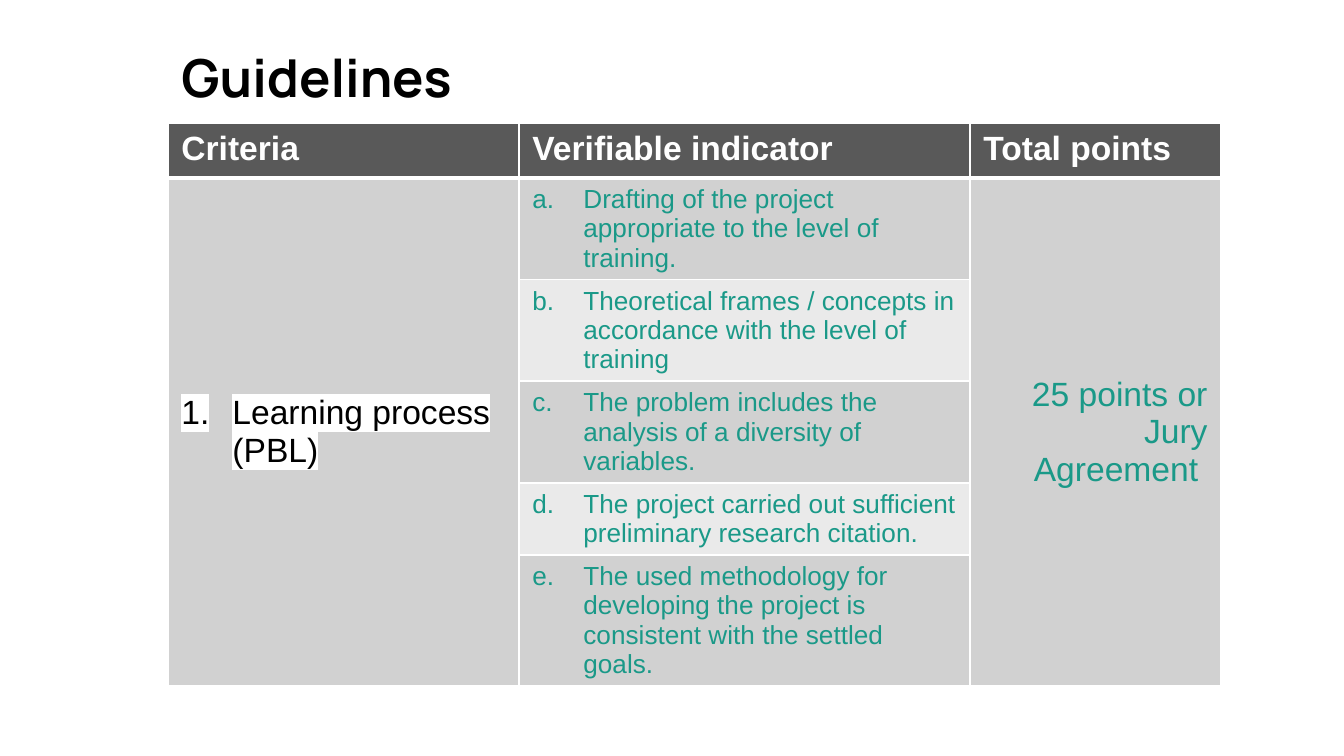
import pptx
import pptx.dml.color
import pptx.enum.text
import pptx.oxml
import pptx.oxml.ns
import pptx.util

TITLE = "Guidelines"
HEADERS = ["Criteria", "Verifiable indicator", "Total points"]
CRITERION = "Learning process (PBL)"
INDICATORS = [
    "Drafting of the project appropriate to the level of training.",
    "Theoretical frames / concepts in accordance with the level of training",
    "The problem includes the analysis of a diversity of variables.",
    "The project carried out sufficient preliminary research citation.",
    "The used methodology for developing the project is consistent with the settled goals.",
]
POINTS = "25 points or Jury Agreement "

THEME = {
    "title_font": "Manrope", "body_font": "Arial",
    "title_size": 28, "large_size": 18, "small_size": 14,
    "black": "000000", "white": "FFFFFF", "teal": "1A9988",
    "header_fill": "595959", "bands": ["D1D1D1", "EAEAEA"],
}
SLIDE_SIZE = (1344, 756)
TITLE_BOX = (168, 32, 857, 80)
TABLE_BOX = (168, 123, 1053, 593)
COLUMN_WIDTHS = [351, 451, 251]
MINIMUM_ROW_HEIGHT = 55  # rows grow to fit their text
INDENT = 51
EMU_PER_PX = 914400 / 134.4


def px(length):
    return pptx.util.Emu(round(length * EMU_PER_PX))


def rgb(name):
    return pptx.dml.color.RGBColor.from_string(name)


def write(text_frame, text, size, color, font="body_font", bold=False):
    text_frame.text = text
    paragraph = text_frame.paragraphs[0]
    paragraph.font.name = THEME[font]
    paragraph.font.size = pptx.util.Pt(THEME[size])
    paragraph.font.bold = bold
    paragraph.font.color.rgb = rgb(THEME[color])
    return paragraph


def xml(tag, content="", attributes=""):
    namespace = pptx.oxml.ns.nsdecls("a")
    return pptx.oxml.parse_xml(f"<a:{tag} {namespace} {attributes}>{content}</a:{tag}>")


def highlight(paragraph):
    color = f'<a:srgbClr val="{THEME["white"]}"/>'
    paragraph.runs[0].font._element.append(xml("highlight", color))


def number(paragraph, scheme, start=1):
    """Give the paragraph a hanging automatic number."""
    properties = paragraph._p.get_or_add_pPr()
    properties.set("marL", str(px(INDENT)))
    properties.set("indent", str(-px(INDENT)))
    properties.insert(0, xml("buAutoNum", attributes=f'type="{scheme}" startAt="{start}"'))


def style_cell(cell, fill, bottom_width=1):
    """Fill the cell and draw its white borders, widths in points."""
    cell.fill.solid()
    cell.fill.fore_color.rgb = rgb(fill)
    properties = cell._tc.get_or_add_tcPr()
    line_fill = f'<a:solidFill><a:srgbClr val="{THEME["white"]}"/></a:solidFill>'
    for position, side in enumerate(["lnL", "lnR", "lnT", "lnB"]):
        width = pptx.util.Pt(bottom_width if side == "lnB" else 1)
        properties.insert(position, xml(side, line_fill, f'w="{width}"'))


def add_title(slide):
    title = slide.shapes.title
    title.left, title.top, title.width, title.height = map(px, TITLE_BOX)
    frame = title.text_frame
    frame.auto_size = pptx.enum.text.MSO_AUTO_SIZE.NONE
    frame.vertical_anchor = pptx.enum.text.MSO_ANCHOR.TOP
    frame.margin_left = frame.margin_right = pptx.util.Inches(0.1)
    frame.margin_top = frame.margin_bottom = pptx.util.Inches(0.1)
    paragraph = write(frame, TITLE, "title_size", "black", "title_font", True)
    paragraph.alignment = pptx.enum.text.PP_ALIGN.LEFT
    highlight(paragraph)


def add_criteria_table(slide):
    row_count = len(INDICATORS) + 1
    frame = slide.shapes.add_table(row_count, len(HEADERS), *map(px, TABLE_BOX))
    table = frame.table
    table.horz_banding = False
    for column, width in zip(table.columns, COLUMN_WIDTHS):
        column.width = px(width)
    for row in table.rows:
        row.height = px(MINIMUM_ROW_HEIGHT)
    frame.height = px(TABLE_BOX[3])

    for column, text in enumerate(HEADERS):
        cell = table.cell(0, column)
        write(cell.text_frame, text, "large_size", "white", bold=True)
        style_cell(cell, THEME["header_fill"], bottom_width=3)

    for row, text in enumerate(INDICATORS, 1):
        cell = table.cell(row, 1)
        number(write(cell.text_frame, text, "small_size", "teal"), "alphaLcPeriod", row)
        style_cell(cell, THEME["bands"][(row - 1) % 2])
        for column in (0, 2):
            style_cell(table.cell(row, column), THEME["bands"][0])

    criterion, points = table.cell(1, 0), table.cell(1, 2)
    for column, cell in ((0, criterion), (2, points)):
        cell.merge(table.cell(row_count - 1, column))
        cell.vertical_anchor = pptx.enum.text.MSO_ANCHOR.MIDDLE
    paragraph = write(criterion.text_frame, CRITERION, "large_size", "black")
    number(paragraph, "arabicPeriod")
    highlight(paragraph)
    paragraph = write(points.text_frame, POINTS, "large_size", "teal")
    paragraph.alignment = pptx.enum.text.PP_ALIGN.RIGHT


def main():
    presentation = pptx.Presentation()
    presentation.slide_width, presentation.slide_height = map(px, SLIDE_SIZE)
    slide = presentation.slides.add_slide(presentation.slide_layouts[5])
    slide.background.fill.solid()
    slide.background.fill.fore_color.rgb = rgb(THEME["white"])
    add_title(slide)
    add_criteria_table(slide)
    presentation.save("out.pptx")


if __name__ == "__main__":
    main()
